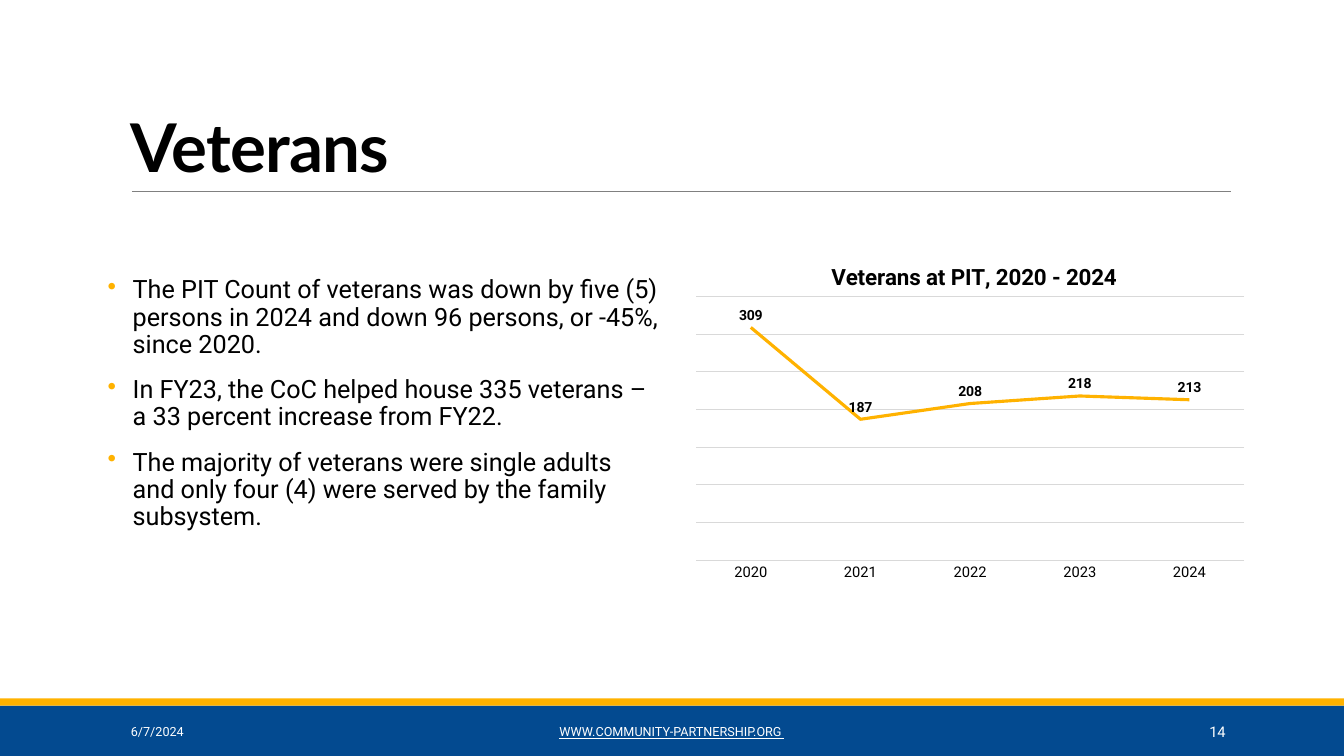
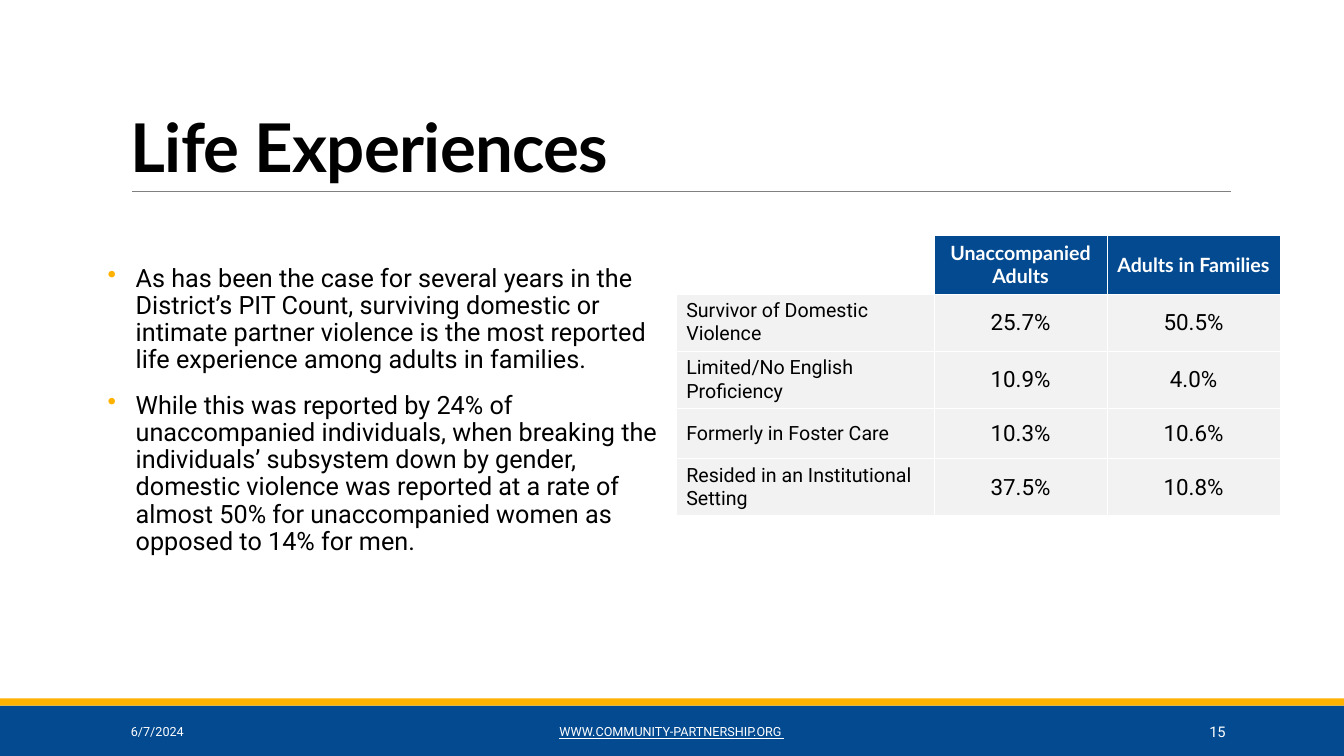
from lxml.etree import SubElement as Sub
from pptx import Presentation
from pptx.chart.data import CategoryChartData as Data
from pptx.dml.color import RGBColor
from pptx.enum.chart import XL_CHART_TYPE as Kind, XL_LABEL_POSITION as Spot
from pptx.enum.chart import XL_MARKER_STYLE as Mark, XL_TICK_MARK as Tick
from pptx.enum.shapes import MSO_CONNECTOR as Link, MSO_SHAPE as Form
from pptx.enum.text import MSO_ANCHOR as Anchor, PP_ALIGN as Align
from pptx.oxml.ns import qn
from pptx.util import Inches, Pt

# Grid of 160 columns by 90 rows, twelve cells to the inch
COLS, ROWS = 160, 90
BLUE, GOLD, GRAY, PALE, RULE = "034A90", "FFB200", "808080", "F2F2F2", "D9D9D9"
BLACK, WHITE = "000000", "FFFFFF"
HEAD, BODY = "Lato", "Roboto"


def cell(n):
    return Inches(n / 12)


def grid(*box):
    return [cell(n) for n in box]


def paint(part, color):
    part.solid()
    part.fore_color.rgb = RGBColor.from_string(color)


def style(font, size, color=BLACK, face=BODY, bold=False):
    font.size, font.name, font.bold = Pt(size), face, bold
    paint(font.fill, color)


def write(para, text, size, color=BLACK, face=BODY, bold=False, align=Align.LEFT):
    para.alignment = align
    run = para.add_run()
    run.text = text
    style(run.font, size, color, face, bold)
    return run


def frame(slide, box, anchor=Anchor.MIDDLE):
    text = slide.shapes.add_textbox(*grid(*box)).text_frame
    text.word_wrap = True
    text.vertical_anchor = anchor
    return text


def band(slide, box, color):
    bar = slide.shapes.add_shape(Form.RECTANGLE, *grid(*box))
    bar.shadow.inherit = False
    paint(bar.fill, color)
    bar.line.fill.background()


def title(slide, text, box):
    # Rule under the title
    x, y, w, h = box
    base = y + h
    line = slide.shapes.add_connector(
        Link.STRAIGHT, *grid(x + 1.3, base, x + w + 0.1, base))
    paint(line.line.fill, GRAY)
    line.line.width = Pt(0.5)
    Sub(line._element.spPr, qn("a:effectLst"))
    # Title text
    para = frame(slide, box, Anchor.BOTTOM).paragraphs[0]
    para.line_spacing = 0.85
    run = write(para, text, 48, face=HEAD, bold=True)
    run.font._element.set("spc", "-50")


def footer(slide, page, box):
    x, y, w, h = box
    band(slide, box, BLUE)
    band(slide, (x, y - 0.85, w, 0.85), GOLD)
    # Date, web address and page number
    parts = [
        ("6/7/2024", 14.4, 32.4, 9, Align.LEFT, False),
        ("WWW.COMMUNITY-PARTNERSHIP.ORG ", 48.4, 63.2, 9, Align.CENTER, True),
        (str(page), 130, 17.1, 10.5, Align.RIGHT, False),
    ]
    for text, left, wide, size, align, under in parts:
        area = frame(slide, (x + left, y + 0.7, wide, h - 1.2))
        run = write(area.paragraphs[0], text, size, WHITE, align=align)
        run.font.underline = under


def bullets(slide, items, box, indent):
    text = frame(slide, box, Anchor.TOP)
    text.margin_left = text.margin_right = 0
    for i, item in enumerate(items):
        para = text.paragraphs[0] if i == 0 else text.add_paragraph()
        para.line_spacing = 0.9
        para.space_before, para.space_after = Pt(11 if i else 0), Pt(2)
        prop = para._p.get_or_add_pPr()
        prop.set("marL", str(Inches(indent)))
        prop.set("indent", str(-Inches(indent)))
        Sub(Sub(prop, qn("a:buClr")), qn("a:srgbClr"), val=GOLD)
        Sub(prop, qn("a:buChar"), char="•")
        write(para, item, 18)


def layout(node, index, inner=False, **spots):
    # Fixed place, in shares of the chart
    for old in node.findall(qn("c:layout")):
        node.remove(old)
    outer = node.makeelement(qn("c:layout"), {})
    node.insert(index, outer)
    lay = Sub(outer, qn("c:manualLayout"))
    if inner:
        Sub(lay, qn("c:layoutTarget"), val="inner")
    for key in "xy":
        Sub(lay, qn(f"c:{key}Mode"), val="edge")
    for key, share in spots.items():
        Sub(lay, qn("c:" + key), val=str(share))


def trend(slide, name, cats, vals, box):
    data = Data()
    data.categories = cats
    data.add_series("Series 1", vals)
    chart = slide.shapes.add_chart(Kind.LINE, *grid(*box), data).chart
    style(chart.font, 10)
    chart.has_legend = False
    # Chart title
    chart.has_title = True
    write(chart.chart_title.text_frame.paragraphs[0], name, 16, bold=True,
          align=Align.CENTER)
    chart.chart_title.include_in_layout = False
    layout(chart.chart_title._element, 1, x=0.25, y=0.05)
    layout(chart._chartSpace.chart.plotArea, 0, True, x=0.02, y=0.16, w=0.96, h=0.76)
    # Axes
    cat, val = chart.category_axis, chart.value_axis
    cat.major_tick_mark = Tick.NONE
    style(cat.tick_labels.font, 10.5)
    val.visible = False
    val.has_major_gridlines = True
    val.minimum_scale, val.maximum_scale, val.major_unit = 0, 350, 50
    for part in (cat, val.major_gridlines):
        paint(part.format.line.fill, RULE)
        part.format.line.width = Pt(0.75)
    # Line and labels
    plot = chart.plots[0]
    plot.vary_by_categories = False
    line = plot.series[0]
    line.smooth = False
    line.marker.style = Mark.NONE
    paint(line.format.line.fill, GOLD)
    line.format.line.width = Pt(2.25)
    tags = line.data_labels
    tags.show_value = True
    tags.position = Spot.ABOVE
    style(tags.font, 10, bold=True)


def border(box):
    prop = box._tc.get_or_add_tcPr()
    for side in "LRTB":
        line = Sub(prop, qn("a:ln" + side), w=str(Pt(0.75)))
        Sub(Sub(line, qn("a:solidFill")), qn("a:srgbClr"), val=WHITE)


def table(slide, rows, box, wides, highs):
    tab = slide.shapes.add_table(len(rows), len(wides), *grid(*box)).table
    tab.first_row = tab.horz_banding = False
    for col, wide in zip(tab.columns, wides):
        col.width = cell(wide)
    for row, high in zip(tab.rows, highs):
        row.height = cell(high)
    for r, row in enumerate(rows):
        for c, text in enumerate(row):
            box = tab.cell(r, c)
            border(box)
            box.vertical_anchor = Anchor.MIDDLE
            if not text:
                box.fill.background()
                continue
            paint(box.fill, PALE if r else BLUE)
            para = box.text_frame.paragraphs[0]
            align = Align.CENTER if c else Align.LEFT
            if r:
                write(para, text, 16 if c else 14, align=align)
            else:
                box.margin_left = box.margin_right = 0
                box.margin_top = box.margin_bottom = 0
                write(para, text, 14, WHITE, HEAD, True, align)


def page(deck, name, num):
    slide = deck.slides.add_slide(deck.slide_layouts[6])
    footer(slide, num, (0, 84, COLS, ROWS - 84))
    title(slide, name, (14.4, 3.7, 132, 19.1))
    return slide


def main():
    deck = Presentation()
    deck.slide_width, deck.slide_height = grid(COLS, ROWS)

    # Veterans
    slide = page(deck, "Veterans", 14)
    bullets(slide, [
        "The PIT Count of veterans was down by five (5) persons in 2024 and "
        "down 96 persons, or -45%, since 2020.",
        "In FY23, the CoC helped house 335 veterans – a 33 percent increase "
        "from FY22.",
        "The majority of veterans were single adults and only four (4) were "
        "served by the family subsystem.",
    ], (12.8, 32.4, 65.6, 34.1), 0.25)
    trend(slide, "Veterans at PIT, 2020 - 2024",
          [str(year) for year in range(2020, 2025)],
          [309, 187, 208, 218, 213], (81.5, 28.7, 68, 41.3))

    # Life experiences
    slide = page(deck, "Life Experiences", 15)
    bullets(slide, [
        "As has been the case for several years in the District’s PIT Count, "
        "surviving domestic or intimate partner violence is the most reported "
        "life experience among adults in families.",
        "While this was reported by 24% of unaccompanied individuals, when "
        "breaking the individuals’ subsystem down by gender, domestic violence "
        "was reported at a rate of almost 50% for unaccompanied women as "
        "opposed to 14% for men.",
    ], (12.8, 31, 65.6, 45.6), 0.28)
    table(slide, [
        ("", "Unaccompanied Adults", "Adults in Families"),
        ("Survivor of Domestic Violence", "25.7%", "50.5%"),
        ("Limited/No English Proficiency", "10.9%", "4.0%"),
        ("Formerly in Foster Care", "10.3%", "10.6%"),
        ("Resided in an Institutional Setting", "37.5%", "10.8%"),
    ], (80.5, 28, 72, 33.5), (30.7, 20.6, 20.6), (7, 6.7, 6, 6, 6))

    deck.save("out.pptx")


if __name__ == "__main__":
    main()
